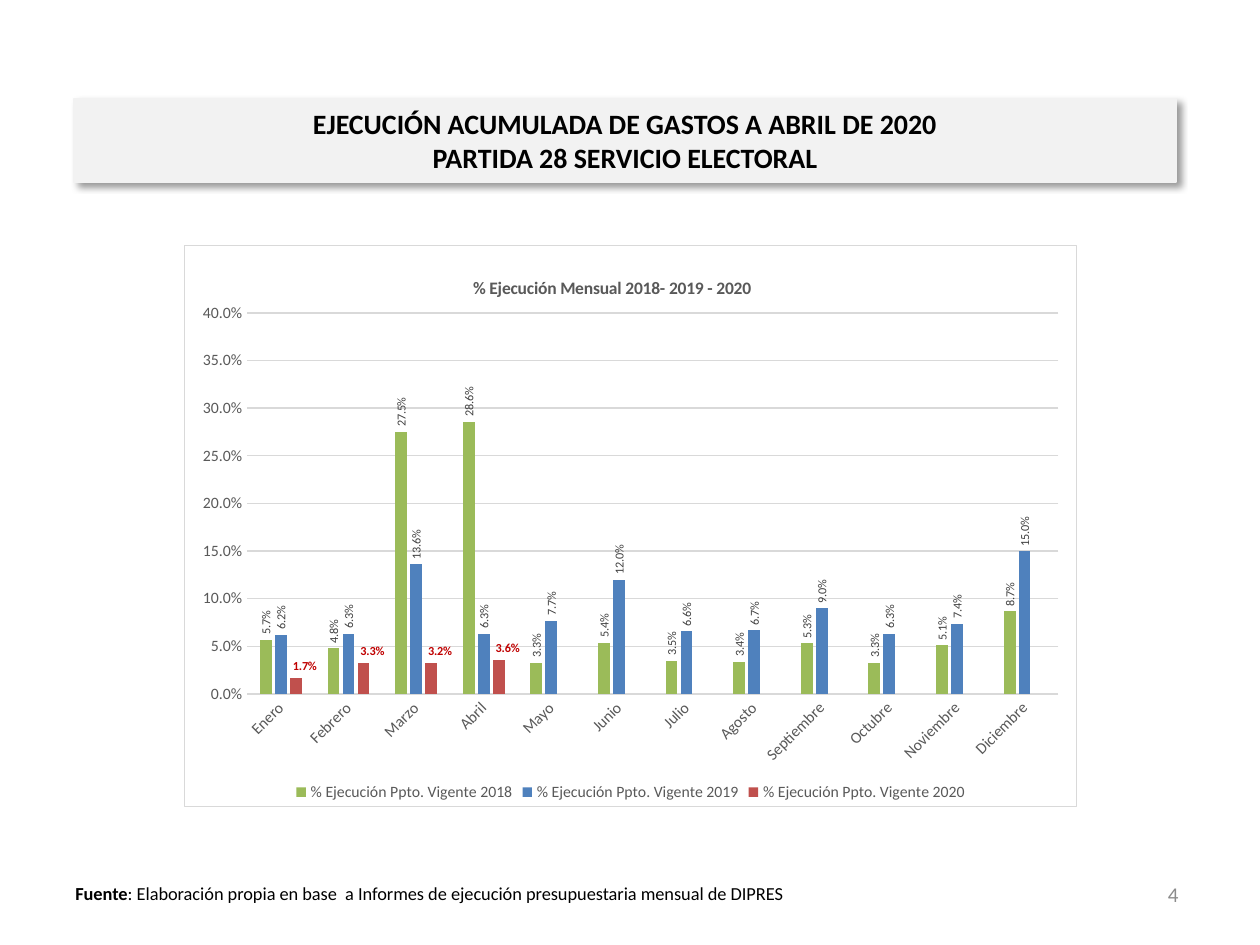
import lxml.etree
import pptx
import pptx.chart.data
import pptx.dml.color
import pptx.enum.chart
import pptx.enum.shapes
import pptx.enum.text
import pptx.oxml
import pptx.util

PX = 914400 / 126
FONT = "Calibri"
GREY, RULE = "595959", "D9D9D9"
ALIGN = pptx.enum.text.PP_ALIGN
MIDDLE = pptx.enum.text.MSO_ANCHOR.MIDDLE
OUTSIDE = pptx.enum.chart.XL_LABEL_POSITION.OUTSIDE_END
NO_TICK = pptx.enum.chart.XL_TICK_MARK.NONE
DRAWING = 'xmlns:a="http://schemas.openxmlformats.org/drawingml/2006/main"'
CHART = 'xmlns:c="http://schemas.openxmlformats.org/drawingml/2006/chart"'

MONTHS = ["Enero", "Febrero", "Marzo", "Abril", "Mayo", "Junio", "Julio",
          "Agosto", "Septiembre", "Octubre", "Noviembre", "Diciembre"]
SERIES = [
    ("2018", "9BBB59", [5.7, 4.8, 27.5, 28.6, 3.3, 5.4, 3.5, 3.4, 5.3, 3.3, 5.1, 8.7]),
    ("2019", "4F81BD", [6.2, 6.3, 13.6, 6.3, 7.7, 12, 6.6, 6.7, 9, 6.3, 7.4, 15]),
    ("2020", "C0504D", [1.7, 3.3, 3.2, 3.6]),
]


def px(*lengths):
    return [pptx.util.Emu(round(length * PX)) for length in lengths]


def colour(code):
    return pptx.dml.color.RGBColor.from_string(code)


def set_all(target, values):
    for name, value in values.items():
        setattr(target, name, value)


def style_font(font, size, code, bold=False):
    set_all(font, {"size": pptx.util.Pt(size), "name": FONT, "bold": bold})
    font.color.rgb = colour(code)


def style_line(line, code):
    line.color.rgb = colour(code)
    line.width = pptx.util.Pt(0.75)


def add_text(page, box, spans, size, code, align=ALIGN.LEFT, anchor=None):
    """Add a text box whose spans are (text, bold) pairs."""
    frame = page.shapes.add_textbox(*px(*box)).text_frame
    set_all(frame, {"word_wrap": True, "vertical_anchor": anchor})
    para = frame.paragraphs[0]
    para.alignment = align
    for text, bold in spans:
        span = para.add_run()
        span.text = text
        style_font(span.font, size, code, bold)


def add_banner(page, box):
    banner = page.shapes.add_shape(pptx.enum.shapes.MSO_SHAPE.RECTANGLE, *px(*box))
    banner.fill.solid()
    banner.fill.fore_color.rgb = colour("F2F2F2")
    style_line(banner.line, "F2F2F2")
    banner._element.spPr.append(pptx.oxml.parse_xml(
        f'<a:effectLst {DRAWING}><a:outerShdw blurRad="50800" dist="38100" dir="2700000" '
        'algn="tl" rotWithShape="0"><a:srgbClr val="000000"><a:alpha val="40000"/>'
        '</a:srgbClr></a:outerShdw></a:effectLst>'))
    frame = banner.text_frame
    set_all(frame, {"word_wrap": True, "vertical_anchor": MIDDLE})
    para = frame.paragraphs[0]
    para.text = "EJECUCIÓN ACUMULADA DE GASTOS A ABRIL DE 2020\vPARTIDA 28 SERVICIO ELECTORAL"
    para.alignment = ALIGN.CENTER
    for span in para.runs:
        style_font(span.font, 16, "000000", True)


def manual_layout(**values):
    """Return a chart layout element; values keep the order of the schema."""
    parts = "".join(f'<c:{name} val="{value}"/>' for name, value in values.items())
    return pptx.oxml.parse_xml(
        f'<c:layout {CHART}><c:manualLayout>{parts}</c:manualLayout></c:layout>')


def place(element, index, layout):
    for old in element.xpath("./c:layout"):
        element.remove(old)
    element.insert(index, layout)


def style_axes(chart):
    months, shares = chart.category_axis, chart.value_axis
    for axis in (months, shares):
        set_all(axis, {"major_tick_mark": NO_TICK, "minor_tick_mark": NO_TICK})
        style_font(axis.tick_labels.font, 9, GREY)
    months.has_major_gridlines = False
    style_line(months.format.line, RULE)
    months._element.xpath("./c:txPr/a:bodyPr")[0].set("rot", "-60000000")
    set_all(shares, {"minimum_scale": 0, "maximum_scale": 0.4, "major_unit": 0.05,
                     "has_major_gridlines": True})
    style_line(shares.major_gridlines.format.line, RULE)
    shares.format.line.fill.background()
    set_all(shares.tick_labels, {"number_format": "0.0%", "number_format_is_linked": False})


def label_series(series, size, code, bold, upright):
    labels = series.data_labels
    set_all(labels, {"show_value": True, "position": OUTSIDE, "number_format": "0.0%",
                     "number_format_is_linked": False})
    style_font(labels.font, size, code, bold)
    if upright:
        body = labels._element.xpath("./c:txPr/a:bodyPr")[0]
        body.set("rot", "-5400000")
        body.set("vert", "horz")


def shift_labels(series, count):
    """Move the first labels a little to the right of their columns."""
    for index in range(count):
        label = series.points[index].data_label
        style_font(label.font, 7, "C00000", True)
        label.position = OUTSIDE
        element = series._element.xpath(f"./c:dLbls/c:dLbl[c:idx/@val='{index}']")[0]
        place(element, 1, manual_layout(x=0.01, y=0))


def add_monthly_chart(page, box):
    data = pptx.chart.data.CategoryChartData(number_format="0.0%")
    data.categories = MONTHS
    for year, _, values in SERIES:
        shares = [round(value / 100, 3) for value in values]
        data.add_series(f"% Ejecución Ppto. Vigente {year}",
                        shares + [None] * (len(MONTHS) - len(shares)))
    kind = pptx.enum.chart.XL_CHART_TYPE.COLUMN_CLUSTERED
    chart = page.shapes.add_chart(kind, *px(*box), data).chart
    style_font(chart.font, 10, "000000")
    chart._chartSpace.xpath("./c:chart")[0].addnext(pptx.oxml.parse_xml(
        f'<c:spPr {CHART} {DRAWING}><a:solidFill><a:srgbClr val="FFFFFF"/></a:solidFill>'
        f'<a:ln w="9525"><a:solidFill><a:srgbClr val="{RULE}"/></a:solidFill></a:ln></c:spPr>'))

    chart.has_title = True
    para = chart.chart_title.text_frame.paragraphs[0]
    span = para.add_run()
    span.text = "% Ejecución Mensual 2018- 2019 - 2020"
    style_font(span.font, 10, GREY, True)
    place(chart.chart_title._element, 1,
          manual_layout(xMode="edge", yMode="edge", x=0.32, y=0.05))

    chart.has_legend = True
    set_all(chart.legend, {"position": pptx.enum.chart.XL_LEGEND_POSITION.BOTTOM,
                           "include_in_layout": False})
    style_font(chart.legend.font, 9, GREY)
    style_axes(chart)
    place(chart._chartSpace.xpath("./c:chart/c:plotArea")[0], 0,
          manual_layout(layoutTarget="inner", xMode="edge", yMode="edge",
                        x=0.07, y=0.12, w=0.91, h=0.68))

    plot = chart.plots[0]
    set_all(plot, {"gap_width": 219, "overlap": -27, "vary_by_categories": False})
    for series, (year, code, values) in zip(plot.series, SERIES):
        series.format.fill.solid()
        series.format.fill.fore_color.rgb = colour(code)
        current = year == "2020"
        label_series(series, 7, "C00000" if current else "404040", current, not current)
        if current:
            shift_labels(series, len(values))


def main():
    deck = pptx.Presentation()
    deck.slide_width, deck.slide_height = px(1260, 945)
    page = deck.slides.add_slide(deck.slide_layouts[6])
    add_text(page, (63, 876, 745, 35),
             [("Fuente", True),
              (": Elaboración propia en base  a Informes de ejecución presupuestaria "
               "mensual de DIPRES", False)], 10.5, "000000")
    add_text(page, (897, 869, 294, 50), [("4", False)], 12, "8C8C8C", ALIGN.RIGHT, MIDDLE)
    add_banner(page, (74, 99, 1102, 83))
    add_monthly_chart(page, (184, 245, 893, 562))
    deck.save("out.pptx")


if __name__ == "__main__":
    main()
